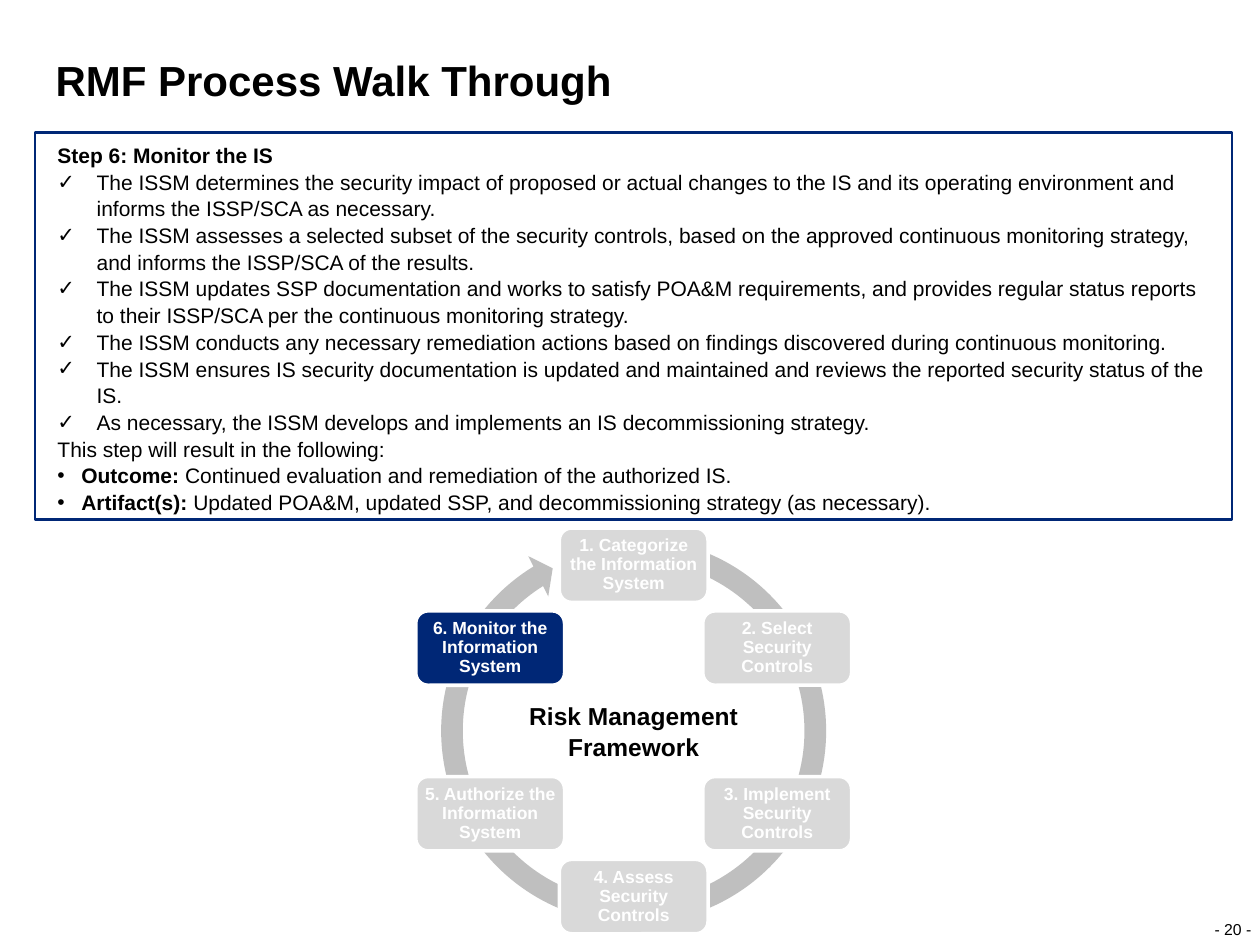
import dataclasses
import math

import pptx
import pptx.dml.color
import pptx.enum.shapes
import pptx.enum.text
import pptx.oxml
import pptx.oxml.ns
import pptx.util

Cm = pptx.util.Cm
Pt = pptx.util.Pt
Align = pptx.enum.text.PP_ALIGN
Anchor = pptx.enum.text.MSO_ANCHOR
Shape = pptx.enum.shapes.MSO_SHAPE


@dataclasses.dataclass(frozen=True)
class Theme:
    font: str = "Arial"
    ink: str = "000000"
    paper: str = "FFFFFF"
    navy: str = "002776"
    muted: str = "D9D9D9"
    ring: str = "BFBFBF"
    title: float = 24
    center: float = 14
    body: float = 12
    stage: float = 10
    footer: float = 9
    spacing: float = 1.06
    tight: float = 0.9


@dataclasses.dataclass(frozen=True)
class Box:
    left: float
    top: float
    width: float
    height: float

    def lengths(self):
        return [Cm(value) for value in dataclasses.astuple(self)]

    def middle(self):
        return self.left + self.width / 2, self.top + self.height / 2


THEME = Theme()

CHECKS = [
    "The ISSM determines the security impact of proposed or actual changes to the IS "
    "and its operating environment and informs the ISSP/SCA as necessary.",
    "The ISSM assesses a selected subset of the security controls, based on the approved "
    "continuous monitoring strategy, and informs the ISSP/SCA of the results.",
    "The ISSM updates SSP documentation and works to satisfy POA&M requirements, and "
    "provides regular status reports to their ISSP/SCA per the continuous monitoring strategy.",
    "The ISSM conducts any necessary remediation actions based on findings discovered "
    "during continuous monitoring.",
    "The ISSM ensures IS security documentation is updated and maintained and reviews "
    "the reported security status of the IS.",
    "As necessary, the ISSM develops and implements an IS decommissioning strategy.",
]
RESULTS = [
    ("Outcome: ", "Continued evaluation and remediation of the authorized IS."),
    ("Artifact(s): ", "Updated POA&M, updated SSP, and decommissioning strategy (as necessary)."),
]
STAGES = [
    "1. Categorize the Information System",
    "2. Select Security Controls",
    "3. Implement Security Controls",
    "4. Assess Security Controls",
    "5. Authorize the Information System",
    "6. Monitor the Information System",
]
ACTIVE_STAGE = 5


def color(code):
    return pptx.dml.color.RGBColor.from_string(code)


def style_span(span, size, bold=False, ink=THEME.ink):
    span.font.name = THEME.font
    span.font.size = Pt(size)
    span.font.bold = bold
    span.font.color.rgb = color(ink)


def set_insets(frame, inset):
    frame.margin_left = frame.margin_right = Cm(inset)
    frame.margin_top = frame.margin_bottom = Cm(inset)


def write_line(frame, text, size, bold=False, ink=THEME.ink,
               align=Align.LEFT, spacing=THEME.spacing):
    frame.text = text
    para = frame.paragraphs[0]
    para.alignment = align
    para.line_spacing = spacing
    style_span(para.runs[0], size, bold, ink)


def add_label(page, box, text, size, inset=None, anchor=Anchor.TOP, wrap=True, **style):
    frame = page.shapes.add_textbox(*box.lengths()).text_frame
    frame.word_wrap = wrap
    frame.vertical_anchor = anchor
    if inset is not None:
        set_insets(frame, inset)
    write_line(frame, text, size, **style)


def add_plain_shape(page, kind, box, fill=None, line=None, width=0):
    shape = page.shapes.add_shape(kind, *box.lengths())
    shape.shadow.inherit = False
    if fill:
        shape.fill.solid()
        shape.fill.fore_color.rgb = color(fill)
    else:
        shape.fill.background()
    if line:
        shape.line.color.rgb = color(line)
        shape.line.width = Pt(width)
    else:
        shape.line.fill.background()
    return shape


def set_bullet(para, mark, indent):
    properties = para._p.get_or_add_pPr()
    properties.set("marL", str(Cm(indent)))
    properties.set("indent", str(-Cm(indent)))
    namespace = pptx.oxml.ns.nsdecls("a")
    for tag in (f'buFont {namespace} typeface="{THEME.font}"', f'buChar {namespace} char="{mark}"'):
        properties.append(pptx.oxml.parse_xml(f"<a:{tag}/>"))


def build_title(page, box):
    add_label(page, box, "RMF Process Walk Through", THEME.title, inset=0,
              anchor=Anchor.BOTTOM, bold=True, spacing=THEME.tight)


def build_page_number(page, box):
    add_label(page, box, "- 20 -", THEME.footer, inset=0, anchor=Anchor.BOTTOM,
              wrap=False, align=Align.CENTER)


def build_step(page, box):
    text_box = Box(box.left + 0.2, box.top + 0.05, box.width - 0.38, box.height)
    frame = page.shapes.add_textbox(*text_box.lengths()).text_frame
    frame.word_wrap = True
    rows = [("Step 6: Monitor the IS", "", None, 0)]
    rows += [("", text, "✓", 0.79) for text in CHECKS]
    rows += [("", "This step will result in the following:", None, 0)]
    rows += [(lead, text, "•", 0.48) for lead, text in RESULTS]
    for index, (lead, text, mark, indent) in enumerate(rows):
        para = frame.add_paragraph() if index else frame.paragraphs[0]
        para.line_spacing = THEME.spacing
        if mark:
            set_bullet(para, mark, indent)
        for words, bold in ((lead, True), (text, False)):
            if words:
                span = para.add_run()
                span.text = words
                style_span(span, THEME.body, bold)
    add_plain_shape(page, Shape.RECTANGLE, box, line=THEME.navy, width=1.5)


def build_cycle(page, box):
    ring = add_plain_shape(page, Shape.CIRCULAR_ARROW, box, fill=THEME.ring)
    for index, value in enumerate((0.053, 3.126, 142.998, 170.852, 0.055)):
        ring.adjustments[index] = value
    center_x, center_y = box.middle()
    radius, width, height = 3.34, 3, 1.5
    for index, text in enumerate(STAGES):
        angle = math.tau * index / len(STAGES)
        stage_box = Box(center_x + radius * math.sin(angle) - width / 2,
                        center_y - radius * math.cos(angle) - height / 2, width, height)
        fill = THEME.navy if index == ACTIVE_STAGE else THEME.muted
        stage = add_plain_shape(page, Shape.ROUNDED_RECTANGLE, stage_box, fill, THEME.paper, 2)
        frame = stage.text_frame
        frame.word_wrap = True
        frame.vertical_anchor = Anchor.MIDDLE
        set_insets(frame, 0.1)
        write_line(frame, text, THEME.stage, True, THEME.paper, Align.CENTER, THEME.tight)
    add_label(page, Box(center_x - 2.49, center_y - 0.77, 4.98, 1.52),
              "Risk Management Framework", THEME.center, bold=True, align=Align.CENTER)


def main():
    deck = pptx.Presentation()
    deck.slide_width, deck.slide_height = Cm(25.4), Cm(19.05)
    page = deck.slides.add_slide(deck.slide_layouts[6])
    build_page_number(page, Box(24.46, 18.52, 0.79, 0.41))
    build_title(page, Box(1.12, 1.22, 20.88, 0.91))
    build_cycle(page, Box(8.66, 10.62, 8.23, 8.23))
    build_step(page, Box(0.71, 2.67, 24.13, 7.8))
    deck.save("out.pptx")


if __name__ == "__main__":
    main()
